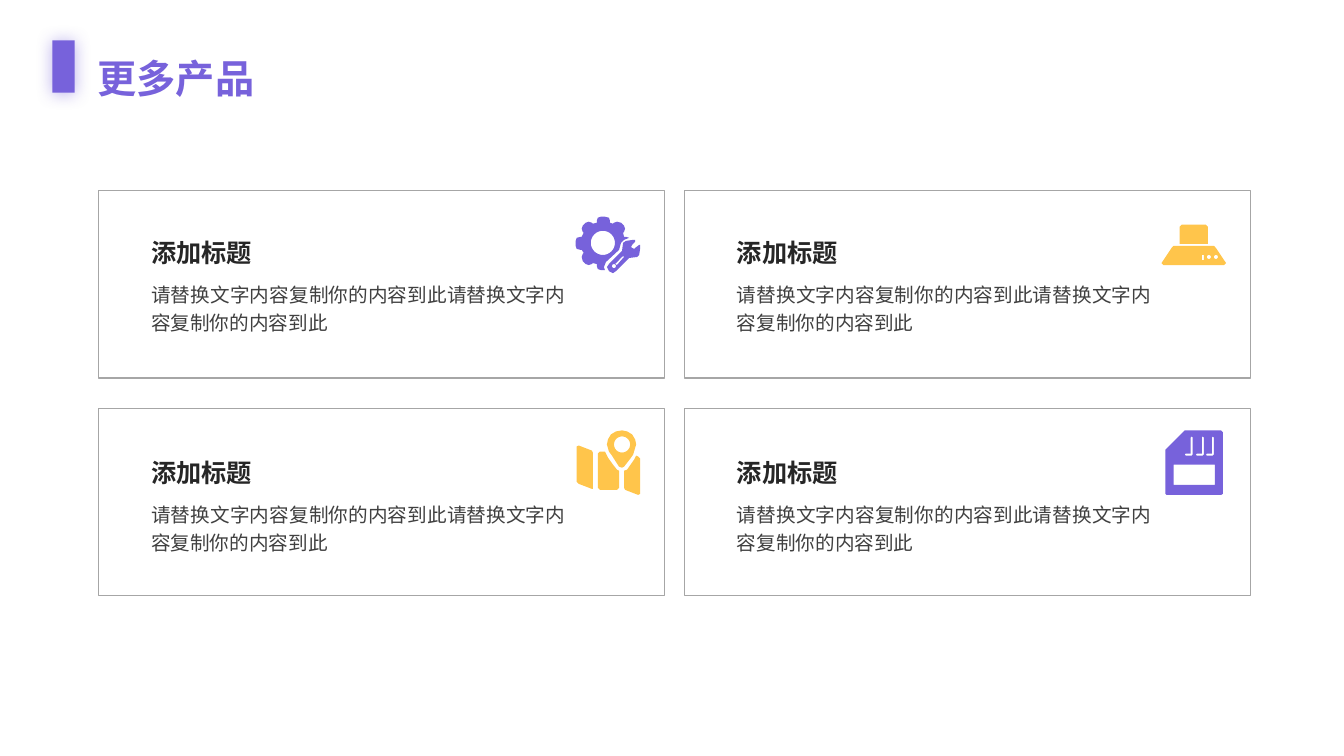
from dataclasses import dataclass
from math import cos, pi, sin

from lxml import etree
from pptx import Presentation
from pptx.dml.color import RGBColor
from pptx.enum.shapes import MSO_SHAPE
from pptx.enum.text import MSO_AUTO_SIZE, PP_ALIGN
from pptx.oxml.ns import qn
from pptx.shapes.autoshape import Shape
from pptx.slide import Slide
from pptx.util import Pt

Contour = list[tuple[float, float]]

RECTANGLE = MSO_SHAPE.RECTANGLE
JUSTIFY = PP_ALIGN.JUSTIFY
GROW = MSO_AUTO_SIZE.SHAPE_TO_FIT_TEXT

PX = 9144
FONT = "Noto Sans CJK SC"
PURPLE = "7762DB"
YELLOW = "FFC54B"
BORDER = "A6A6A6"
TITLE_INK = "262626"
BODY_INK = "404040"

CARD_LEFT, CARD_TOP = 98, 189
CARD_WIDTH, CARD_HEIGHT = 561, 186
COLUMN_STEP, ROW_STEP = 581, 216
TEXT_INDENT, TEXT_TOP, TEXT_ROW_STEP = 42, 225, 218
BODY_DROP = 46


@dataclass(frozen=True)
class TextStyle:
    size: int
    color: str
    bold: bool
    spacing: float


@dataclass(frozen=True)
class Icon:
    x: int
    y: int
    color: str
    contours: list[Contour]


@dataclass(frozen=True)
class Card:
    title: str
    body: str
    icon: Icon


HEADING = TextStyle(28, PURPLE, True, 1.5)
CARD_TITLE = TextStyle(18, TITLE_INK, True, 1.2)
CARD_BODY = TextStyle(14, BODY_INK, False, 1.2)


def disc(x: float, y: float, radius: float) -> Contour:
    steps = 32
    return [(x + radius * cos(2 * pi * i / steps), y + radius * sin(2 * pi * i / steps))
            for i in range(steps)]


def block(left: int, top: int, right: int, bottom: int) -> Contour:
    return [(left, top), (right, top), (right, bottom), (left, bottom)]


def contact(x: int) -> Contour:
    hook = [(1, 23), (6, 23), (6, 7), (7, 6), (8, 7), (8, 24), (7, 25), (1, 25), (0, 24)]
    return [(x + dx, y) for dx, y in hook]


COG = [
    (25, 0), (29, 0), (33, 1), (34, 4), (34, 6), (37, 7), (38, 6), (41, 5), (45, 6),
    (48, 9), (49, 12), (48, 15), (47, 16), (48, 20), (50, 20), (53, 21), (48, 23),
    (45, 26), (43, 33), (30, 45), (28, 50), (29, 53), (25, 53), (22, 52), (21, 49),
    (21, 47), (17, 46), (16, 47), (13, 48), (10, 47), (7, 44), (6, 40), (7, 37),
    (8, 36), (6, 33), (5, 33), (1, 32), (0, 29), (0, 24), (1, 21), (5, 20), (6, 20),
    (8, 16), (7, 15), (6, 12), (7, 9), (10, 6), (13, 5), (16, 6), (17, 7), (21, 6),
    (21, 4), (22, 1),
]
WRENCH = [
    (57, 23), (59, 23), (59, 25), (56, 28), (55, 30), (56, 31), (58, 32), (59, 31),
    (63, 28), (64, 28), (64, 31), (63, 38), (61, 40), (53, 41), (40, 54), (37, 56),
    (33, 54), (31, 50), (33, 47), (46, 34), (47, 26), (50, 24),
]
WRENCH_SLOT = [(47, 39), (46, 40), (40, 46), (39, 47), (41, 48), (47, 41), (48, 40)]

MAP_LEFT = [(2, 15), (15, 20), (16, 22), (16, 58), (15, 58), (2, 53), (0, 51), (0, 16)]
MAP_MIDDLE = [
    (23, 21), (28, 21), (31, 27), (36, 34), (40, 39), (42, 40), (42, 57), (40, 59),
    (23, 59), (21, 57), (21, 23),
]
MAP_RIGHT = [
    (59, 25), (61, 26), (63, 28), (63, 63), (61, 64), (48, 59), (47, 57), (47, 40),
    (50, 39), (57, 29),
]
PIN = [
    (45, 0), (50, 1), (55, 4), (58, 9), (59, 14), (56, 24), (54, 27), (47, 36), (45, 37),
    (42, 36), (35, 25), (32, 21), (30, 14), (31, 9), (34, 4), (39, 1),
]

HOOD_BASE = [(12, 21), (52, 21), (54, 23), (64, 38), (62, 40), (2, 40), (0, 38), (10, 23)]
HOOD_DUCT = [(20, 0), (44, 0), (46, 2), (46, 19), (18, 19), (18, 2)]

MEMORY_CASE = [
    (19, 0), (55, 0), (57, 2), (57, 63), (55, 64), (1, 64), (0, 63), (0, 19), (18, 1),
]

REPAIR = Icon(473, 26, PURPLE, [COG, disc(27, 26, 12), WRENCH, WRENCH_SLOT, disc(38, 49, 2)])
HOOD = Icon(473, 34, YELLOW, [
    HOOD_BASE, HOOD_DUCT, disc(54, 32, 2), disc(47, 32, 2), block(40, 30, 42, 35)])
LOCATION = Icon(474, 22, YELLOW, [MAP_LEFT, MAP_MIDDLE, MAP_RIGHT, PIN, disc(45, 14, 8)])
MEMORY = Icon(477, 22, PURPLE, [
    MEMORY_CASE, block(8, 34, 49, 54), *(contact(x) for x in (19, 30, 40))])

TITLE = "添加标题"
BODY = "请替换文字内容复制你的内容到此请替换文字内容复制你的内容到此"
CARDS = [Card(TITLE, BODY, icon) for icon in (REPAIR, HOOD, LOCATION, MEMORY)]


def rgb(color: str) -> RGBColor:
    return RGBColor.from_string(color)


def add_rectangle(slide: Slide, x: int, y: int, width: int, height: int) -> Shape:
    rectangle = slide.shapes.add_shape(RECTANGLE, x * PX, y * PX, width * PX, height * PX)
    rectangle.shadow.inherit = False
    return rectangle


def add_accent(slide: Slide) -> None:
    accent = add_rectangle(slide, 37, 55, 52, 22)
    accent.rotation = 90
    accent.fill.solid()
    accent.fill.fore_color.rgb = rgb(PURPLE)
    accent.line.fill.background()
    effects = accent._element.spPr.find(qn("a:effectLst"))
    glow = etree.SubElement(effects, qn("a:outerShdw"), blurRad=str(Pt(12)), dist=str(Pt(1)),
                            dir="5400000", algn="ctr", rotWithShape="0")
    tint = etree.SubElement(glow, qn("a:srgbClr"), val=PURPLE)
    etree.SubElement(tint, qn("a:alpha"), val="50000")


def add_text(slide: Slide, x: int, y: int, width: int, height: int,
             text: str, style: TextStyle) -> None:
    frame = slide.shapes.add_textbox(x * PX, y * PX, width * PX, height * PX).text_frame
    frame.word_wrap = True
    frame.auto_size = GROW
    paragraph = frame.paragraphs[0]
    paragraph.alignment = JUSTIFY
    paragraph.line_spacing = style.spacing
    run = paragraph.add_run()
    run.text = text
    run.font.size = Pt(style.size)
    run.font.bold = style.bold
    run.font.color.rgb = rgb(style.color)
    run.font.name = FONT
    etree.SubElement(run._r.get_or_add_rPr(), qn("a:ea"), typeface=FONT)


def add_icon(slide: Slide, card_x: int, card_y: int, icon: Icon) -> None:
    contours = [[((card_x + icon.x + x) * PX, (card_y + icon.y + y) * PX) for x, y in contour]
                for contour in icon.contours]
    builder = slide.shapes.build_freeform(*contours[0][0])
    builder.add_line_segments(contours[0][1:], close=True)
    for contour in contours[1:]:
        builder.move_to(*contour[0])
        builder.add_line_segments(contour[1:], close=True)
    drawing = builder.convert_to_shape()
    drawing.shadow.inherit = False
    drawing.fill.solid()
    drawing.fill.fore_color.rgb = rgb(icon.color)
    drawing.line.fill.background()


def add_card(slide: Slide, card: Card, row: int, column: int) -> None:
    x = CARD_LEFT + column * COLUMN_STEP
    y = CARD_TOP + row * ROW_STEP
    text_x = x + TEXT_INDENT
    text_y = TEXT_TOP + row * TEXT_ROW_STEP
    frame = add_rectangle(slide, x, y, CARD_WIDTH, CARD_HEIGHT)
    frame.fill.background()
    frame.line.color.rgb = rgb(BORDER)
    frame.line.width = Pt(1)
    add_icon(slide, x, y, card.icon)
    add_text(slide, text_x, text_y + BODY_DROP, 431, 67, card.body, CARD_BODY)
    add_text(slide, text_x, text_y, 224, 45, card.title, CARD_TITLE)


def main() -> None:
    deck = Presentation()
    deck.slide_width, deck.slide_height = 1333 * PX, 750 * PX
    slide = deck.slides.add_slide(deck.slide_layouts[6])
    add_accent(slide)
    add_text(slide, 87, 26, 243, 73, "更多产品", HEADING)
    for index, card in enumerate(CARDS):
        add_card(slide, card, *divmod(index, 2))
    deck.save("out.pptx")


if __name__ == "__main__":
    main()
